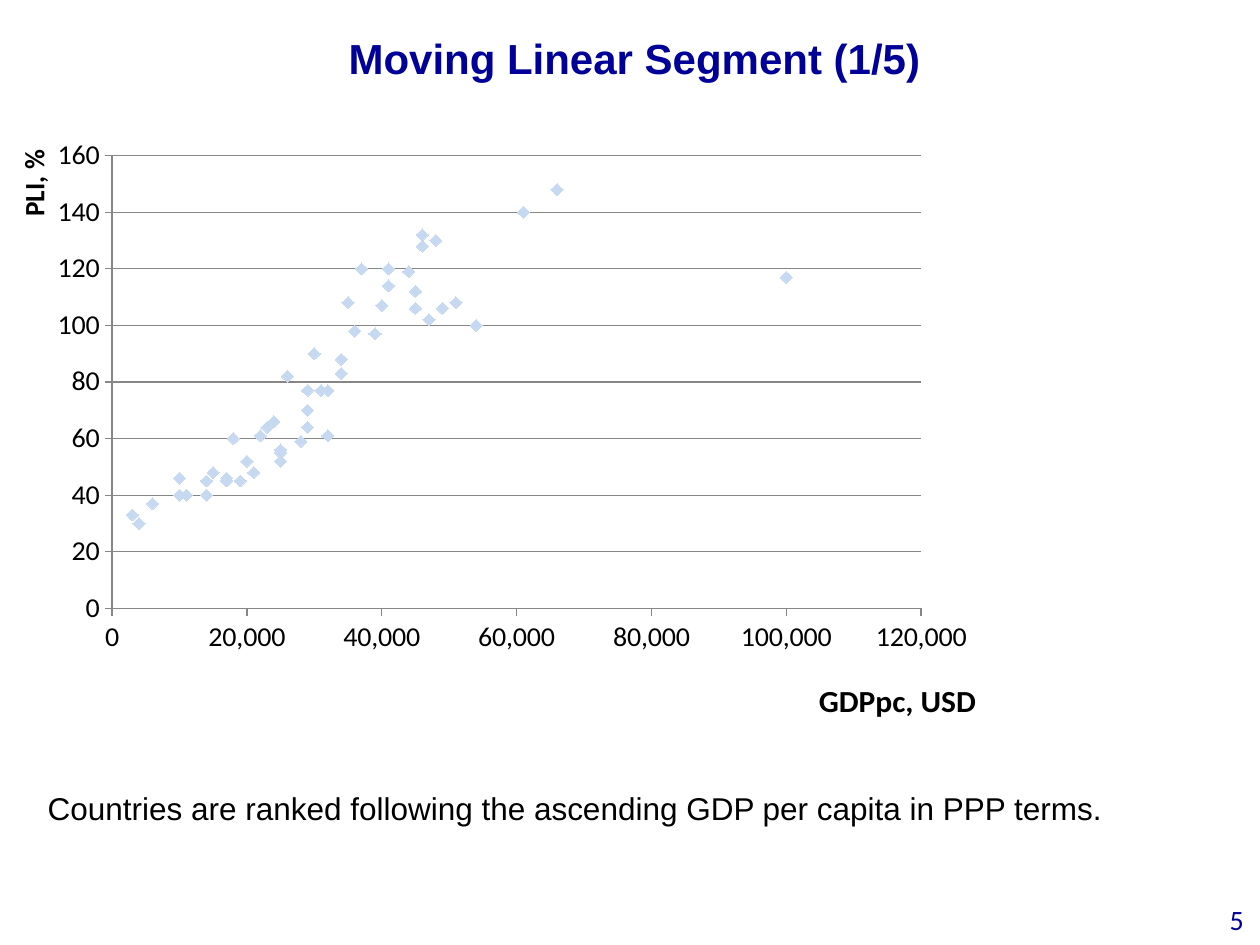
"""Build the Moving Linear Segment slide with its price level scatter chart."""
import pptx
import pptx.chart.data
import pptx.dml.color
import pptx.enum.chart
import pptx.enum.text
import pptx.oxml
import pptx.oxml.ns
import pptx.util
from pptx.util import Inches


def style_font(font, size, name, color="000000", bold=False):
    font.size = pptx.util.Pt(size)
    font.name = name
    font.bold = bold
    font.color.rgb = pptx.dml.color.RGBColor.from_string(color)


def place_in_chart(element, index, **fractions):
    for layout in element.findall(pptx.oxml.ns.qn("c:layout")):
        element.remove(layout)
    target = '<c:layoutTarget val="inner"/>' if "w" in fractions else ""
    modes = "".join(f'<c:{key}Mode val="edge"/>' for key in "xy")
    values = "".join(f'<c:{key} val="{value}"/>' for key, value in fractions.items())
    element.insert(index, pptx.oxml.parse_xml(
        f'<c:layout {pptx.oxml.ns.nsdecls("c")}><c:manualLayout>'
        f"{target}{modes}{values}</c:manualLayout></c:layout>"))


presentation = pptx.Presentation()
presentation.slide_width = Inches(10)
presentation.slide_height = Inches(7.5)
slide = presentation.slides.add_slide(presentation.slide_layouts[5])

title = slide.shapes.title
title.left, title.top, title.width, title.height = map(Inches, (0.9, 0.21, 8.27, 0.5))
title.text_frame.text = "Moving Linear Segment (1/5)"
title.text_frame.vertical_anchor = pptx.enum.text.MSO_ANCHOR.MIDDLE
title.text_frame.paragraphs[0].alignment = pptx.enum.text.PP_ALIGN.CENTER
style_font(title.text_frame.paragraphs[0].font, 24, "Arial", "000099", True)

gdp_thousands = [
    3, 4, 6, 10, 10, 11, 14, 14, 15, 17, 17, 18, 19, 20, 21, 22, 23, 24,
    25, 25, 25, 25, 26, 28, 29, 29, 29, 30, 31, 32, 32, 34, 34, 35, 36, 37,
    39, 40, 41, 41, 44, 45, 45, 46, 46, 47, 48, 49, 49, 51, 54, 61, 66, 100]
price_levels = [
    33, 30, 37, 40, 46, 40, 40, 45, 48, 46, 45, 60, 45, 52, 48, 61, 64, 66,
    52, 56, 55, 55, 82, 59, 70, 77, 64, 90, 77, 61, 77, 88, 83, 108, 98, 120,
    97, 107, 114, 120, 119, 112, 106, 128, 132, 102, 130, 106, 106, 108, 100,
    140, 148, 117]
chart_data = pptx.chart.data.XyChartData()
countries = chart_data.add_series("PLI")
for gdp, price_level in zip(gdp_thousands, price_levels):
    countries.add_data_point(gdp * 1000, price_level)
chart = slide.shapes.add_chart(
    pptx.enum.chart.XL_CHART_TYPE.XY_SCATTER, Inches(0), Inches(1.07),
    Inches(7.87), Inches(4.72), chart_data).chart
chart.has_legend = False
chart.has_title = False
style_font(chart.font, 10, "Calibri")
plot_area = chart.plots[0]._element.getparent()
place_in_chart(plot_area, 0, x=0.113, y=0.036, w=0.816, h=0.781)
chart.plots[0].vary_by_categories = False

series = chart.plots[0].series[0]
series.format.line.fill.background()
series.marker.style = pptx.enum.chart.XL_MARKER_STYLE.DIAMOND
series.marker.size = 7
marker_color = pptx.dml.color.RGBColor.from_string("C6D9F1")
for fill in (series.marker.format.fill, series.marker.format.line.fill):
    fill.solid()
    fill.fore_color.rgb = marker_color

axis_color = pptx.dml.color.RGBColor.from_string("868686")
for axis, text, size, maximum, step, number_format, left, top, turn in (
        (chart.category_axis, "GDPpc, USD", 18, 120000, 20000, "#,##0", 0.82, 0.93, 0),
        (chart.value_axis, "PLI, %", 16, 160, 20, "0", 0.01, 0.02, -90)):
    axis.minimum_scale = 0
    axis.maximum_scale = maximum
    axis.major_unit = step
    axis.major_tick_mark = pptx.enum.chart.XL_TICK_MARK.OUTSIDE
    axis.minor_tick_mark = pptx.enum.chart.XL_TICK_MARK.NONE
    axis.has_major_gridlines = axis is chart.value_axis or turn != 0
    axis.format.line.color.rgb = axis_color
    axis.tick_labels.number_format = number_format
    axis.tick_labels.number_format_is_linked = False
    style_font(axis.tick_labels.font, 16, "Calibri")
    text_frame = axis.axis_title.text_frame
    text_frame.text = text
    text_frame._txBody.bodyPr.set("rot", str(turn * 60000))
    style_font(text_frame.paragraphs[0].font, size, "Calibri", bold=True)
    place_in_chart(axis.axis_title._element, 1, x=left, y=top)
chart.value_axis.major_gridlines.format.line.color.rgb = axis_color

for text, box, size, name, color, alignment in (
        ("Countries are ranked following the ascending GDP per capita in PPP terms.",
         (0.28, 6.16, 9.47, 0.5), 18, "Arial", "000000", pptx.enum.text.PP_ALIGN.LEFT),
        ("5", (9.53, 7.22, 0.44, 0.16), 16, "Calibri", "000099",
         pptx.enum.text.PP_ALIGN.RIGHT)):
    text_frame = slide.shapes.add_textbox(*map(Inches, box)).text_frame
    text_frame.word_wrap = True
    text_frame.vertical_anchor = pptx.enum.text.MSO_ANCHOR.MIDDLE
    text_frame.text = text
    text_frame.paragraphs[0].alignment = alignment
    style_font(text_frame.paragraphs[0].font, size, name, color)

presentation.save("out.pptx")
